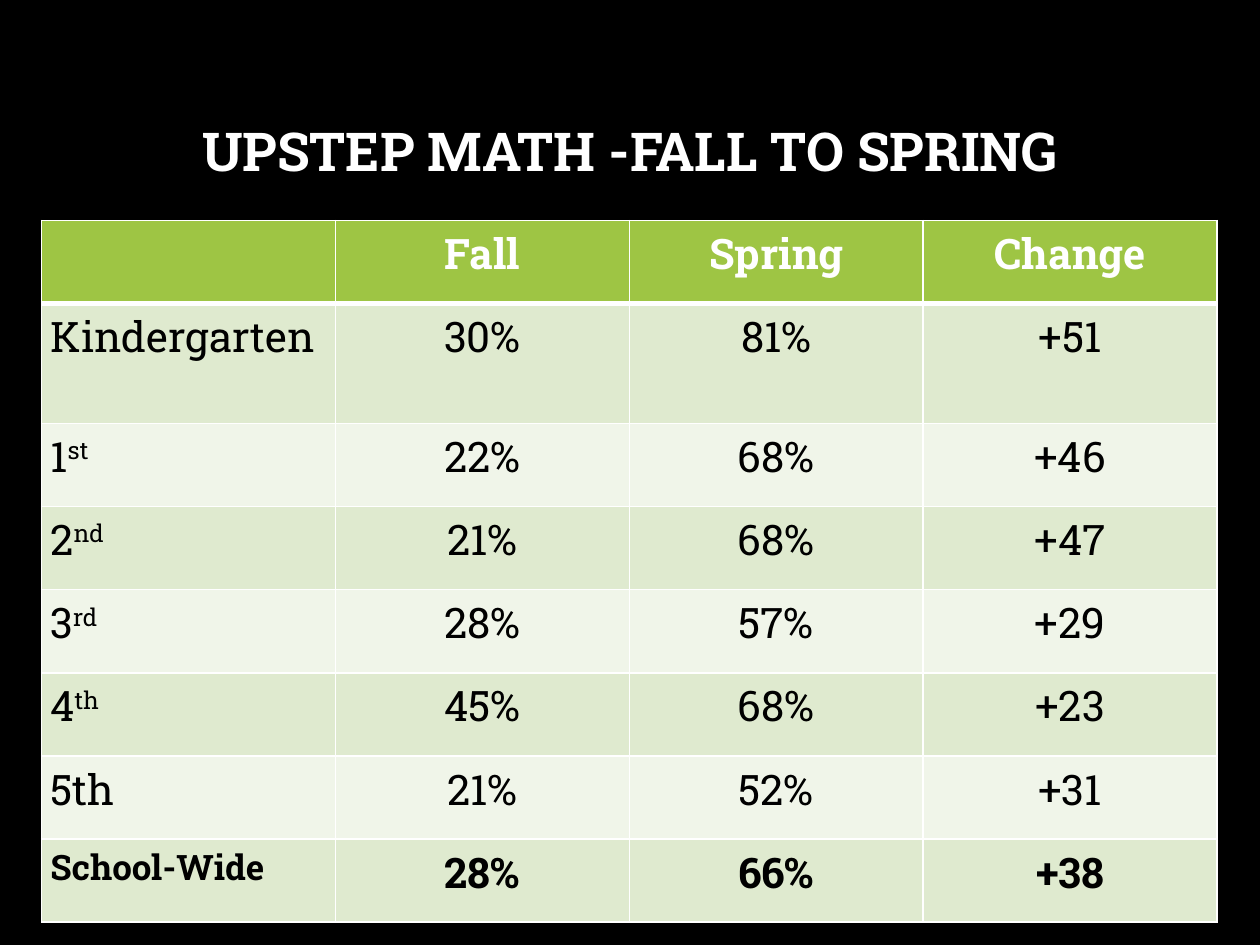
from dataclasses import dataclass

from lxml import etree
from pptx import Presentation
from pptx.dml.color import RGBColor
from pptx.enum.text import MSO_ANCHOR, MSO_AUTO_SIZE, PP_ALIGN
from pptx.oxml.ns import qn
from pptx.util import Inches, Pt

LEFT, CENTER = PP_ALIGN.LEFT, PP_ALIGN.CENTER
TOP, MIDDLE = MSO_ANCHOR.TOP, MSO_ANCHOR.MIDDLE
NO_AUTOFIT = MSO_AUTO_SIZE.NONE

TITLE = "UPSTEP MATH -FALL TO SPRING"
SCORES = [
    ("", "Fall", "Spring", "Change"),
    ("Kindergarten", "30%", "81%", "+51"),
    (("1", "st"), "22%", "68%", "+46"),
    (("2", "nd"), "21%", "68%", "+47"),
    (("3", "rd"), "28%", "57%", "+29"),
    (("4", "th"), "45%", "68%", "+23"),
    ("5th", "21%", "52%", "+31"),
    ("School-Wide", "28%", "66%", "+38"),
]
KINDERGARTEN_ROW = 1


@dataclass(frozen=True)
class Theme:
    """Colours, font and type sizes of the slide."""

    font: str = "Roboto Slab"
    background: str = "000000"
    light: str = "FFFFFF"
    dark: str = "000000"
    header: str = "9EC544"
    bands: tuple = ("F0F5E9", "DFEACF")
    title_size: float = 30.6
    cell_size: float = 24
    total_label_size: float = 20
    thin_border: float = 1
    thick_border: float = 3


def apply_format(target, values):
    """Set each named attribute of the target."""
    for name, value in values.items():
        setattr(target, name, value)


class SlideBuilder:
    """Holds the theme and the current slide."""

    def __init__(self, presentation, theme):
        """Add a title-only slide with the theme's background."""
        self.theme = theme
        self.slide = presentation.slides.add_slide(presentation.slide_layouts[5])
        fill = self.slide.background.fill
        fill.solid()
        fill.fore_color.rgb = RGBColor.from_string(theme.background)

    def add_run(self, paragraph, text, size, color, bold):
        """Append a run in the theme font."""
        run = paragraph.add_run()
        run.text = text
        apply_format(run.font, {"name": self.theme.font, "size": Pt(size), "bold": bold})
        run.font.color.rgb = RGBColor.from_string(color)
        return run

    def add_title(self, text, left, top, width, height):
        """Place and fill the title placeholder."""
        title = self.slide.shapes.title
        apply_format(title, {"left": Inches(left), "top": Inches(top),
                             "width": Inches(width), "height": Inches(height)})
        apply_format(title.text_frame, {"word_wrap": True, "auto_size": NO_AUTOFIT,
                                        "vertical_anchor": MIDDLE})
        paragraph = title.text_frame.paragraphs[0]
        apply_format(paragraph, {"alignment": CENTER, "line_spacing": 0.9})
        self.add_run(paragraph, text, self.theme.title_size, self.theme.light, True)

    def add_borders(self, cell, top, bottom):
        """Draw the four borders of a cell."""
        thin = self.theme.thin_border
        properties = cell._tc.get_or_add_tcPr()
        for side, width in (("L", thin), ("R", thin), ("T", top), ("B", bottom)):
            line = etree.SubElement(properties, qn(f"a:ln{side}"), w=str(Pt(width)))
            fill = etree.SubElement(line, qn("a:solidFill"))
            etree.SubElement(fill, qn("a:srgbClr"), val=self.theme.light)

    def format_cell(self, cell, fill_color, top, bottom):
        """Set the margins, borders and fill of a cell."""
        apply_format(cell, {"margin_left": Inches(0.07), "margin_right": Inches(0.07),
                            "margin_top": Inches(0.04), "margin_bottom": Inches(0.04),
                            "vertical_anchor": TOP})
        self.add_borders(cell, top, bottom)
        cell.fill.solid()
        cell.fill.fore_color.rgb = RGBColor.from_string(fill_color)

    def write_cell(self, cell, content, alignment, size, color, bold):
        """Write text, or a number with a raised suffix, in a cell."""
        paragraph = cell.text_frame.paragraphs[0]
        paragraph.alignment = alignment
        text, suffix = content if isinstance(content, tuple) else (content, "")
        if text:
            self.add_run(paragraph, text, size, color, bold)
        if suffix:
            run = self.add_run(paragraph, suffix, size, color, bold)
            run.font._element.set("baseline", "30000")

    def add_table(self, rows, left, top, width, row_height, tall_rows):
        """Add a table with a header, banded rows and a bold total row."""
        theme = self.theme
        last = len(rows) - 1
        heights = [tall_rows.get(index, row_height) for index in range(len(rows))]
        frame = self.slide.shapes.add_table(
            len(rows), len(rows[0]), Inches(left), Inches(top),
            Inches(width), Inches(sum(heights)))
        table = frame.table
        table.horz_banding = False
        for row_index, values in enumerate(rows):
            table.rows[row_index].height = Inches(heights[row_index])
            is_header = row_index == 0
            fill_color = theme.header if is_header else theme.bands[row_index % 2]
            color = theme.light if is_header else theme.dark
            top_border = theme.thick_border if row_index == 1 else theme.thin_border
            bottom_border = theme.thick_border if is_header else theme.thin_border
            for column_index, content in enumerate(values):
                cell = table.cell(row_index, column_index)
                is_label = column_index == 0
                is_total_label = is_label and row_index == last
                size = theme.total_label_size if is_total_label else theme.cell_size
                self.format_cell(cell, fill_color, top_border, bottom_border)
                self.write_cell(cell, content, LEFT if is_label else CENTER,
                                size, color, row_index in (0, last))


def main():
    """Build and save the presentation."""
    presentation = Presentation()
    apply_format(presentation, {"slide_width": Inches(10), "slide_height": Inches(7.5)})
    builder = SlideBuilder(presentation, Theme())
    builder.add_title(TITLE, 1.2, 0.7, 7.6, 1.04)
    builder.add_table(SCORES, 0.33, 1.75, 9.33, 0.66, {KINDERGARTEN_ROW: 0.95})
    presentation.save("out.pptx")


if __name__ == "__main__":
    main()
